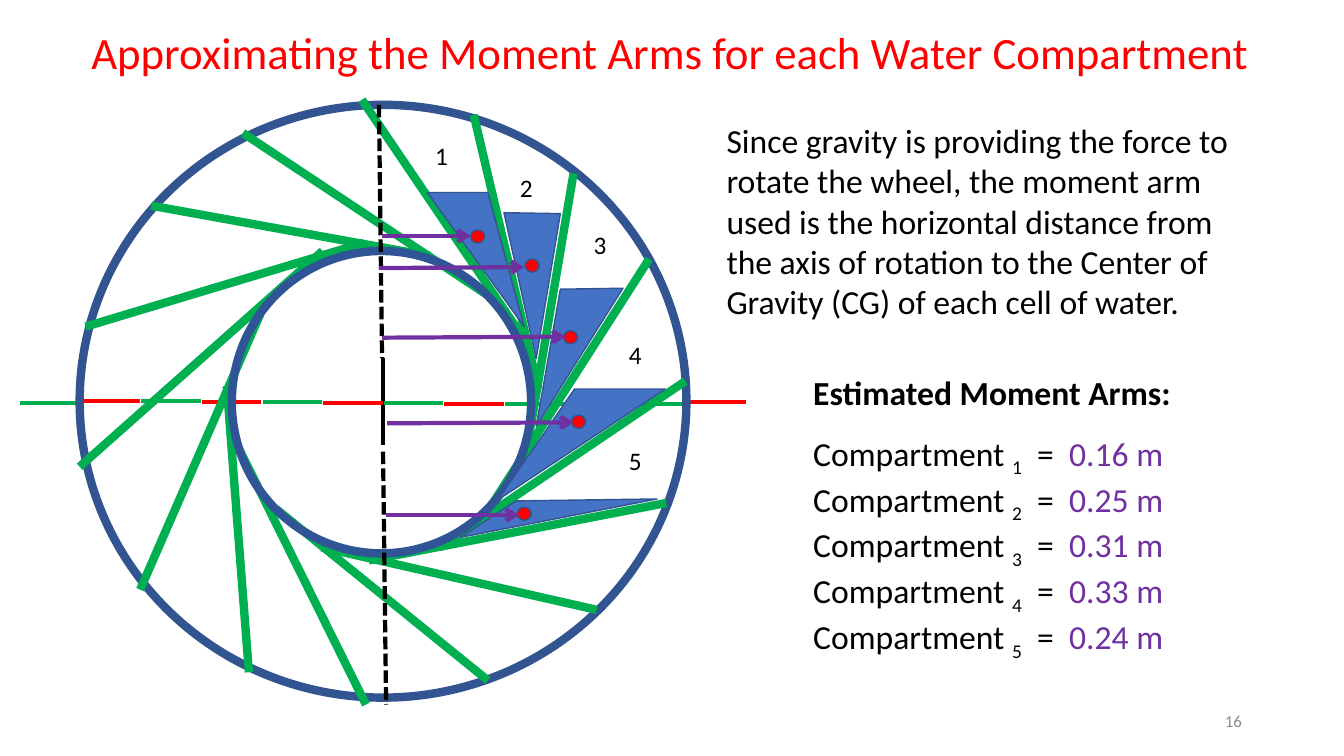
from lxml import etree
from pptx import Presentation
from pptx.dml.color import RGBColor
from pptx.enum.dml import MSO_LINE
from pptx.enum.shapes import MSO_CONNECTOR, MSO_SHAPE
from pptx.enum.text import MSO_ANCHOR, MSO_AUTO_SIZE, PP_ALIGN
from pptx.oxml.ns import qn
from pptx.util import Pt

STRAIGHT, OVAL = MSO_CONNECTOR.STRAIGHT, MSO_SHAPE.OVAL
DASHED = MSO_LINE.SQUARE_DOT
LEFT, CENTER, RIGHT = PP_ALIGN.LEFT, PP_ALIGN.CENTER, PP_ALIGN.RIGHT
TOP, MIDDLE = MSO_ANCHOR.TOP, MSO_ANCHOR.MIDDLE
FIT, FIXED = MSO_AUTO_SIZE.SHAPE_TO_FIT_TEXT, MSO_AUTO_SIZE.NONE

COLORS = {"black": "000000", "red": "FF0000", "green": "00B050", "purple": "7030A0",
          "rim": "325491", "hub": "2F5597", "water": "4472C4", "gray": "8C8C8C"}
FONT = "Calibri"

# Content, all lengths in points
TITLE = "Approximating the Moment Arms for each Water Compartment"
EXPLANATION = ("Since gravity is providing the force to rotate the wheel, the moment arm "
               "used is the horizontal distance from the axis of rotation to the Center of "
               "Gravity (CG) of each cell of water.")
ARMS_HEADING = "Estimated Moment Arms:"
PAGE_NUMBER = "16"

RIM = (56.9, 74.9, 433.4, 423.4)
HUB = (165.6, 179.3, 213.8, 216)
CROSS = [(273.6, 255.6, 273.6, 318.2), (241.2, 288, 306, 288)]
VERTICAL_AXIS = [(270.7, 74.9, 272.9, 255.6), (273.6, 322.6, 275.8, 503.3)]
AXIS_LEFT, AXIS_PITCH, AXIS_DASH = 14.4, 43.3, 42.5
AXIS_HEIGHTS = [288, 286.6, 286.6, 287.3, 287.3, 288, 288, 288.7, 288.7, 287.3, 288.7, 287.3]

BLADES = [  # from the rim to the hub
    (258.5, 71.3, 376.6, 245.5), (338.4, 82.1, 384.5, 277.9), (409.7, 123.8, 375.1, 328.3),
    (489.6, 272.2, 313.9, 391), (463.7, 185, 342, 375.1), (475.9, 359.3, 263.5, 400.3),
    (426.2, 435.6, 229.7, 391), (348.5, 486, 197.3, 363.6), (261.4, 503.3, 170.6, 320.4),
    (100.1, 421.2, 185.8, 224.6), (177.8, 480.2, 162, 275.8), (56.9, 333.4, 230.4, 179.3),
    (108, 146.9, 307.4, 182.9), (61.2, 233.3, 259.9, 173.5), (173.5, 95, 348.5, 211),
]

COMPARTMENTS = [
    {"number": "1", "arm": "0.16 m", "label": (303.8, 96.5), "cg": (336.2, 164.2),
     "water": [(305.3, 137.5), (348.5, 137.5), (374.4, 233.3)],
     "arrow": (272.9, 168.5, 336.2, 168.5)},
    {"number": "2", "arm": "0.25 m", "label": (364.3, 119.5), "cg": (375.1, 185),
     "water": [(360, 151.9), (400.3, 152.6), (383, 256.3)],
     "arrow": (270.7, 191.5, 374.4, 190.8)},
    {"number": "3", "arm": "0.31 m", "label": (416.9, 160.6), "cg": (402.5, 236.2),
     "water": [(400.3, 206.6), (445, 205.9), (383, 304.6)],
     "arrow": (272.9, 241.2, 403.9, 240.5)},
    {"number": "4", "arm": "0.33 m", "label": (442.1, 239), "cg": (408.2, 296.6),
     "water": [(410.4, 277.9), (475.2, 277.9), (355.7, 357.1)],
     "arrow": (276.5, 302.4, 409.7, 301.7)},
    {"number": "5", "arm": "0.24 m", "label": (442.1, 314.6), "cg": (369.4, 362.2),
     "water": [(368.6, 357.8), (469.4, 356.4), (329, 383.8)],
     "arrow": (275.8, 367.9, 370.8, 367.9)},
]
LABEL_SIZE = (38.2, 28.8)
CG_SIZE = (10.1, 9.4)

prs = Presentation()
prs.slide_width, prs.slide_height = Pt(960), Pt(540)
slide = prs.slides.add_slide(prs.slide_layouts[6])
shapes = slide.shapes


def rgb(color):
    return RGBColor.from_string(COLORS[color])


def add_line(ends, color, width=3, dash=None, arrow=False):
    line = shapes.add_connector(STRAIGHT, *[Pt(v) for v in ends])
    line.line.color.rgb = rgb(color)
    line.line.width = Pt(width)
    if dash:
        line.line.dash_style = dash
    properties = line._element.spPr
    if arrow:
        etree.SubElement(properties.find(qn("a:ln")), qn("a:tailEnd"), type="arrow")
    etree.SubElement(properties, qn("a:effectLst"))


def style(shape, fill, outline, width):
    shape.shadow.inherit = False
    if fill:
        shape.fill.solid()
        shape.fill.fore_color.rgb = rgb(fill)
    else:
        shape.fill.background()
    shape.line.color.rgb = rgb(outline)
    shape.line.width = Pt(width)


def add_oval(box, fill, outline, width):
    style(shapes.add_shape(OVAL, *[Pt(v) for v in box]), fill, outline, width)


def add_run(paragraph, text, size, color="black", bold=False, subscript=False):
    run = paragraph.add_run()
    run.text = text
    run.font.name, run.font.size, run.font.bold = FONT, Pt(size), bold
    run.font.color.rgb = rgb(color)
    if subscript:
        run._r.get_or_add_rPr().set("baseline", "-25000")


def add_text(box, text, size, color="black", align=LEFT, bold=False, anchor=TOP, fit=FIT):
    frame = shapes.add_textbox(*[Pt(v) for v in box]).text_frame
    frame.word_wrap = True
    frame.auto_size = fit
    frame.vertical_anchor = anchor
    frame.paragraphs[0].alignment = align
    add_run(frame.paragraphs[0], text, size, color, bold)
    return frame


# Centre cross and horizontal axis
for ends in CROSS:
    add_line(ends, "black")
for i, y in enumerate(AXIS_HEIGHTS):
    x = AXIS_LEFT + i * AXIS_PITCH
    add_line((x, y, x + AXIS_DASH, y), "red" if i % 2 else "green")

# Wheel
add_oval(RIM, None, "rim", 6)
for ends in BLADES:
    add_line(ends, "green", 6)
for cell in COMPARTMENTS:
    add_text(cell["label"] + LABEL_SIZE, cell["number"], 18)
add_oval(HUB, None, "hub", 6)

# Water in the compartments
for cell in COMPARTMENTS:
    start, *others = [(Pt(x), Pt(y)) for x, y in cell["water"]]
    outline = shapes.build_freeform(*start)
    outline.add_line_segments(others, close=True)
    style(outline.convert_to_shape(), "water", "rim", 1)

# Vertical axis, centers of gravity and moment arms
for ends in VERTICAL_AXIS:
    add_line(ends, "black", dash=DASHED)
for cell in COMPARTMENTS:
    add_oval(cell["cg"] + CG_SIZE, "red", "rim", 1)
for cell in COMPARTMENTS:
    add_line(cell["arrow"], "purple", arrow=True)

# Estimated values
estimates = add_text((573.8, 262.1, 311, 196.6), ARMS_HEADING, 24, bold=True)
for i, cell in enumerate(COMPARTMENTS):
    estimate = estimates.add_paragraph()
    if i == 0:
        estimate.space_before = Pt(14.6)
    add_run(estimate, "Compartment ", 24)
    add_run(estimate, cell["number"], 24, subscript=True)
    add_run(estimate, "  =  ", 24)
    add_run(estimate, cell["arm"], 24, "purple")

# Title, explanation and page number
add_text((54, 14.4, 849.6, 46.1), TITLE, 32, "red", CENTER)
add_text((511.9, 82.1, 376.6, 152.6), EXPLANATION, 24)
add_text((678.2, 500.4, 216, 28.8), PAGE_NUMBER, 12, "gray", RIGHT, anchor=MIDDLE, fit=FIXED)

prs.save("out.pptx")
